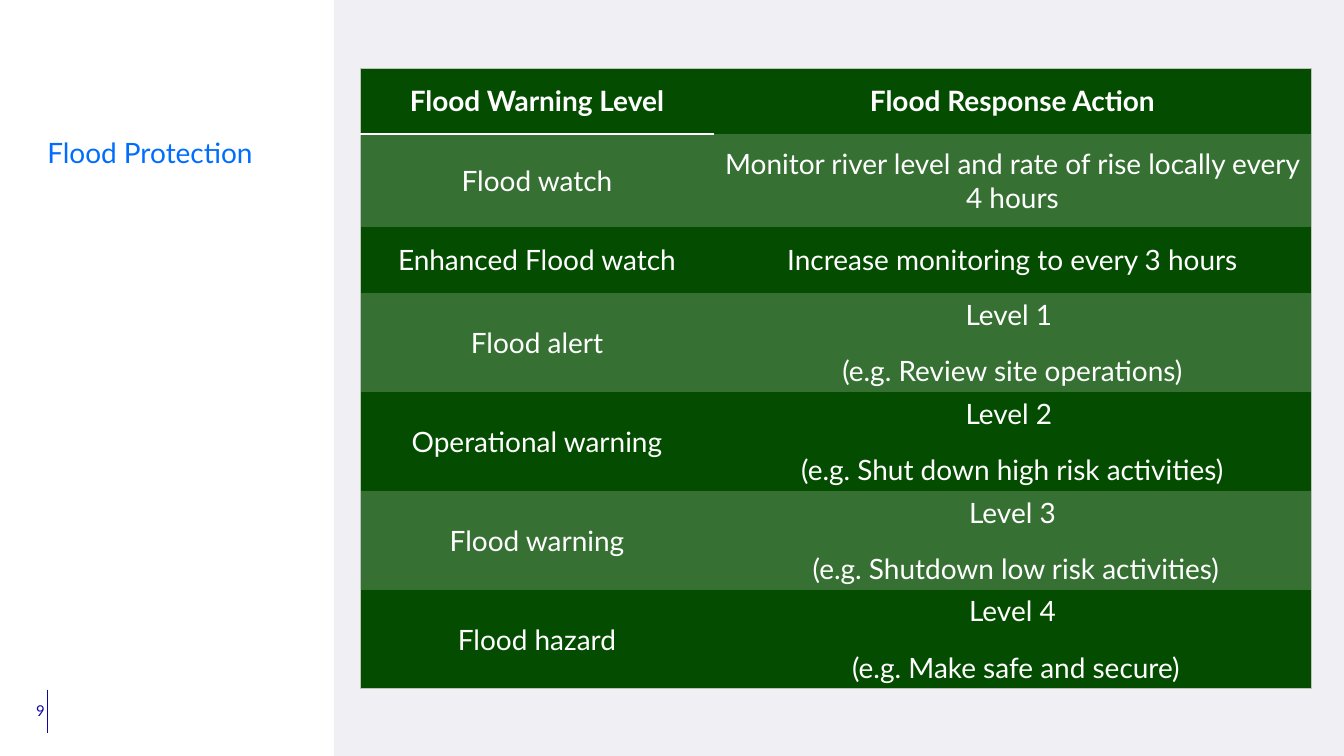
from dataclasses import dataclass

from lxml.etree import SubElement
from pptx import Presentation
from pptx.dml.color import RGBColor
from pptx.enum.shapes import MSO_CONNECTOR, MSO_SHAPE
from pptx.enum.text import MSO_ANCHOR, PP_ALIGN
from pptx.oxml import parse_xml
from pptx.oxml.ns import nsdecls, qn
from pptx.util import Emu, Pt

SLIDE_WIDTH, SLIDE_HEIGHT = 1344, 756
EMU_PER_PX = 9144000 / SLIDE_WIDTH


@dataclass(frozen=True)
class Theme:
    font: str = "Lato"
    panel: str = "EFEFF4"
    title: str = "006DFF"
    navy: str = "10069F"
    dark_row: str = "044D00"
    light_row: str = "367133"
    table_text: str = "FFFFFF"
    table_edge: str = "BDC2BD"
    header_rule: str = "FFFFFF"
    body_size: float = 15
    number_size: float = 8


THEME = Theme()

COLUMN_WIDTHS = [354, 597]
ROW_HEIGHTS = [66, 93, 66, 99, 99, 99, 99]
# Each row holds a warning level and the paragraphs of its response.
ROWS = [
    ("Flood Warning Level", ["Flood Response Action"]),
    ("Flood watch", ["Monitor river level and rate of rise locally every 4 hours"]),
    ("Enhanced Flood watch", ["Increase monitoring to every 3 hours"]),
    ("Flood alert", ["Level 1 ", "(e.g. Review site operations)"]),
    ("Operational warning", ["Level 2 ", "(e.g. Shut down high risk activities)"]),
    ("Flood warning", ["Level 3", " (e.g. Shutdown low risk activities)"]),
    ("Flood hazard", ["Level 4", " (e.g. Make safe and secure)"]),
]


def px(length):
    return Emu(round(length * EMU_PER_PX))


def color(value):
    return RGBColor.from_string(value)


def add_run(paragraph, text, size, text_color, bold=False):
    run = paragraph.add_run()
    run.text = text
    run.font.name = THEME.font
    run.font.size = Pt(size)
    run.font.bold = bold
    run.font.color.rgb = color(text_color)


def add_panel(slide, left, top, width, height):
    shape = slide.shapes.add_shape(
        MSO_SHAPE.RECTANGLE, px(left), px(top), px(width), px(height))
    shape.shadow.inherit = False
    shape.fill.solid()
    shape.fill.fore_color.rgb = color(THEME.panel)
    shape.line.fill.background()


def add_vertical_line(slide, x, top, bottom):
    connector = slide.shapes.add_connector(
        MSO_CONNECTOR.STRAIGHT, px(x), px(top), px(x), px(bottom))
    connector.line.color.rgb = color(THEME.navy)
    connector.line.width = Pt(0.5)
    SubElement(connector._element.spPr, qn("a:effectLst"))


def add_label(slide, text, box, size, text_color, align=PP_ALIGN.LEFT, spacing=1.0):
    frame = slide.shapes.add_textbox(*map(px, box)).text_frame
    frame.word_wrap = True
    paragraph = frame.paragraphs[0]
    paragraph.alignment = align
    paragraph.line_spacing = spacing
    add_run(paragraph, text, size, text_color)


def set_borders(cell, borders):
    """Draw the sides given as {side: (color, points)} and hide the others."""
    properties = cell._tc.get_or_add_tcPr()
    for index, side in enumerate("LRTB"):
        line_color, points = borders.get(side, (None, 0))
        paint = (f'<a:solidFill><a:srgbClr val="{line_color}"/></a:solidFill>'
                 if line_color else "<a:noFill/>")
        properties.insert(index, parse_xml(
            f'<a:ln{side} {nsdecls("a")} w="{Pt(points)}">{paint}</a:ln{side}>'))


def cell_borders(row, column):
    """Give the table an outer edge and a rule under its first heading."""
    edge, rule = (THEME.table_edge, 0.5), (THEME.header_rule, 1.5)
    borders = {"L" if column == 0 else "R": edge}
    if row == 0:
        borders["T"] = edge
    if row == len(ROWS) - 1:
        borders["B"] = edge
    if column == 0 and row < 2:
        borders["B" if row == 0 else "T"] = rule
    return borders


def fill_cell(cell, paragraphs, row, column):
    is_header = row == 0
    cell.vertical_anchor = MSO_ANCHOR.MIDDLE
    cell.margin_left = cell.margin_right = px(5 if is_header else 9)
    cell.margin_top = cell.margin_bottom = px(5 if is_header else 0)
    cell.fill.solid()
    cell.fill.fore_color.rgb = color(THEME.light_row if row % 2 else THEME.dark_row)
    set_borders(cell, cell_borders(row, column))
    frame = cell.text_frame
    for index, text in enumerate(paragraphs):
        paragraph = frame.add_paragraph() if index else frame.paragraphs[0]
        paragraph.alignment = PP_ALIGN.CENTER
        if index:
            paragraph.space_before = Pt(6)
        if not is_header:
            paragraph.space_after = Pt(6)
        add_run(paragraph, text, THEME.body_size, THEME.table_text, is_header)


def add_warning_table(slide, left, top):
    table = slide.shapes.add_table(
        len(ROWS), len(COLUMN_WIDTHS), px(left), px(top),
        px(sum(COLUMN_WIDTHS)), px(sum(ROW_HEIGHTS))).table
    table.horz_banding = False
    for column, width in zip(table.columns, COLUMN_WIDTHS):
        column.width = px(width)
    for row, height in zip(table.rows, ROW_HEIGHTS):
        row.height = px(height)
    for row, (level, response) in enumerate(ROWS):
        fill_cell(table.cell(row, 0), [level], row, 0)
        fill_cell(table.cell(row, 1), response, row, 1)


def main():
    presentation = Presentation()
    presentation.slide_width = px(SLIDE_WIDTH)
    presentation.slide_height = px(SLIDE_HEIGHT)
    slide = presentation.slides.add_slide(presentation.slide_layouts[6])
    add_vertical_line(slide, 47, 690, 733)
    add_panel(slide, 334, 0, SLIDE_WIDTH - 334, SLIDE_HEIGHT)
    add_label(slide, "9", (7, 695, 51, 32), THEME.number_size, THEME.navy,
              align=PP_ALIGN.RIGHT)
    add_label(slide, "Flood Protection", (34, 133, 262, 89), THEME.body_size,
              THEME.title, spacing=0.9)
    add_warning_table(slide, 360, 68)
    presentation.save("out.pptx")


if __name__ == "__main__":
    main()
